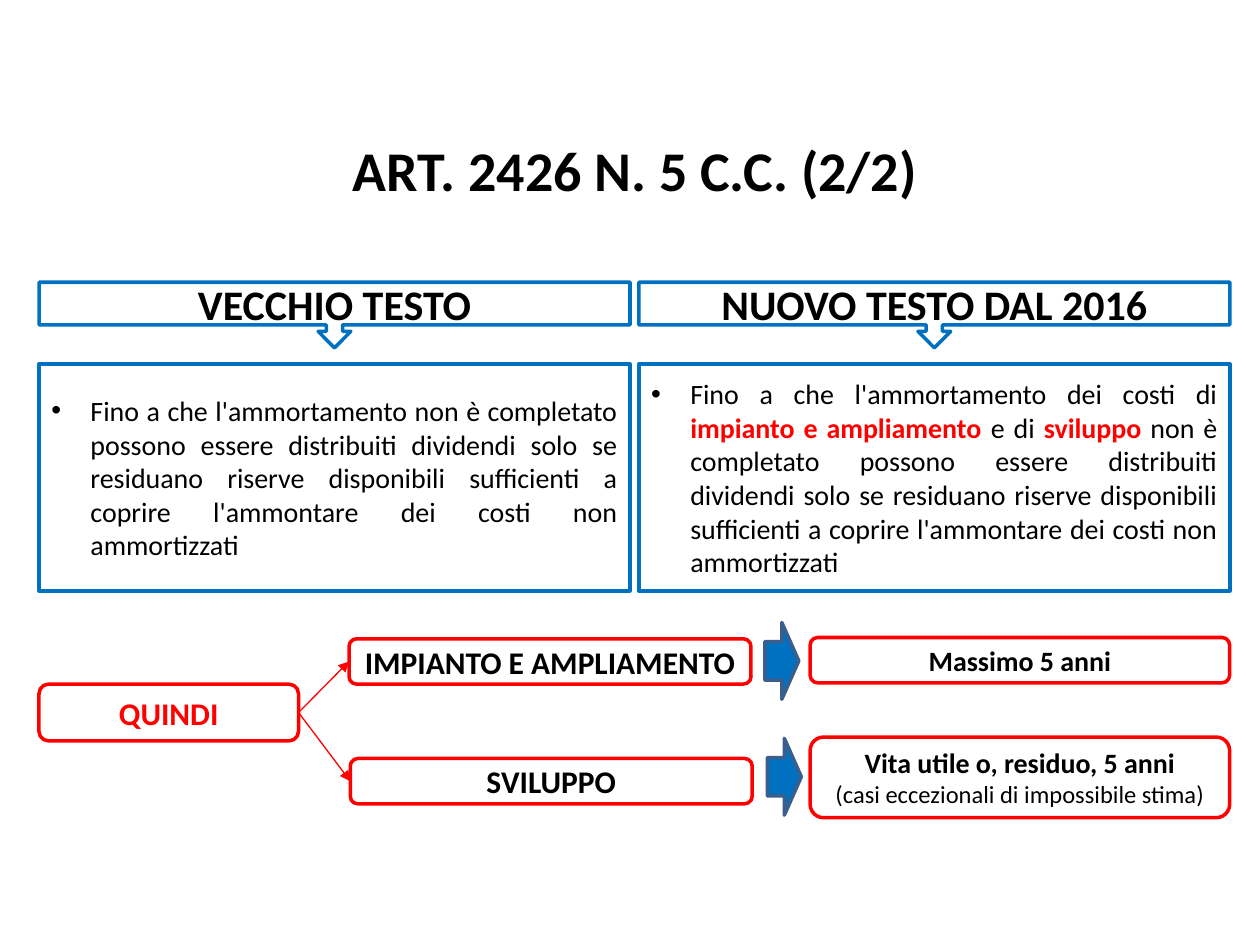
from lxml import etree
from pptx import Presentation
from pptx.dml.color import RGBColor
from pptx.enum.shapes import MSO_CONNECTOR, MSO_SHAPE
from pptx.enum.text import MSO_ANCHOR, PP_ALIGN
from pptx.oxml.ns import qn
from pptx.util import Inches, Pt

BLACK = RGBColor(0x00, 0x00, 0x00)
RED = RGBColor(0xFF, 0x00, 0x00)
BLUE = RGBColor(0x00, 0x70, 0xC0)
DARK_BLUE = RGBColor(0x3A, 0x5F, 0x8C)
FONT = "Calibri"

TITLE = "ART. 2426 N. 5 C.C. (2/2)"
VERSIONS = [
    (0.31, "VECCHIO TESTO", [
        ("Fino a che l'ammortamento non è completato possono essere distribuiti "
         "dividendi solo se residuano riserve disponibili sufficienti a coprire "
         "l'ammontare dei costi non ammortizzati", False),
    ]),
    (5.07, "NUOVO TESTO DAL 2016", [
        ("Fino a che l'ammortamento dei costi di ", False),
        ("impianto e ampliamento ", True),
        ("e di ", False),
        ("sviluppo", True),
        (" non è completato possono essere distribuiti dividendi solo se residuano "
         "riserve disponibili sufficienti a coprire l'ammontare dei costi non "
         "ammortizzati ", False),
    ]),
]
CONCLUSION = "QUINDI"
OUTCOMES = [
    {"cost": "IMPIANTO E AMPLIAMENTO", "cost_at": (2.77, 5.07),
     "arrow_at": (6.07, 4.94), "limit_at": (6.43, 5.06), "limit_height": 0.36,
     "limit": [("Massimo 5 anni", 16, True)]},
    {"cost": "SVILUPPO", "cost_at": (2.78, 6.02),
     "arrow_at": (6.09, 5.86), "limit_at": (6.43, 5.85), "limit_height": 0.64,
     "limit": [("Vita utile o, residuo, 5 anni", 16, True),
               ("(casi eccezionali di impossibile stima)", 14, False)]},
]


def add_box(slide, preset, left, top, width, height, line, fill=None):
    box = slide.shapes.add_shape(
        preset, Inches(left), Inches(top), Inches(width), Inches(height))
    box.shadow.inherit = False
    if fill is None:
        box.fill.background()
    else:
        box.fill.solid()
        box.fill.fore_color.rgb = fill
    box.line.color.rgb = line
    box.line.width = Pt(2)
    box.text_frame.word_wrap = True
    box.text_frame.vertical_anchor = MSO_ANCHOR.MIDDLE
    return box


def add_run(paragraph, text, size, bold=True, color=BLACK):
    run = paragraph.add_run()
    run.text = text
    run.font.name = FONT
    run.font.size = Pt(size)
    run.font.bold = bold
    run.font.color.rgb = color


def add_centred(frame, lines, color=BLACK):
    for index, (text, size, bold) in enumerate(lines):
        paragraph = frame.add_paragraph() if index else frame.paragraphs[0]
        paragraph.alignment = PP_ALIGN.CENTER
        add_run(paragraph, text, size, bold, color)


def add_bullet(paragraph):
    properties = paragraph._p.get_or_add_pPr()
    properties.set("marL", str(Inches(0.31)))
    properties.set("indent", str(Inches(-0.31)))
    etree.SubElement(properties, qn("a:buFont"), typeface="Arial")
    etree.SubElement(properties, qn("a:buChar"), char="•")


def add_branch(slide, source, target):
    branch = slide.shapes.add_connector(MSO_CONNECTOR.STRAIGHT, 0, 0, 0, 0)
    branch.begin_connect(source, 3)
    branch.end_connect(target, 1)
    branch.line.color.rgb = RED
    branch.line.width = Pt(0.75)
    etree.SubElement(branch.line._get_or_add_ln(), qn("a:tailEnd"), type="triangle")
    etree.SubElement(branch._element.spPr, qn("a:effectLst"))


def main():
    presentation = Presentation()
    presentation.slide_width = Inches(10)
    presentation.slide_height = Inches(7.5)
    slide = presentation.slides.add_slide(presentation.slide_layouts[6])

    title = slide.shapes.add_textbox(Inches(0.04), Inches(1.04), Inches(10), Inches(0.6))
    title.text_frame.word_wrap = True
    title.text_frame.vertical_anchor = MSO_ANCHOR.MIDDLE
    add_centred(title.text_frame, [(TITLE, 32, True)])

    for left, heading, passages in VERSIONS:
        header = add_box(slide, MSO_SHAPE.DOWN_ARROW_CALLOUT, left, 2.24, 4.69, 0.52, BLUE)
        add_centred(header.text_frame, [(heading, 24, True)])
        body = add_box(slide, MSO_SHAPE.RECTANGLE, left, 2.89, 4.69, 1.8, BLUE)
        paragraph = body.text_frame.paragraphs[0]
        paragraph.alignment = PP_ALIGN.JUSTIFY
        add_bullet(paragraph)
        for text, key in passages:
            add_run(paragraph, text, 16, key, RED if key else BLACK)

    conclusion = add_box(slide, MSO_SHAPE.ROUNDED_RECTANGLE, 0.31, 5.43, 2.06, 0.45, RED)
    add_centred(conclusion.text_frame, [(CONCLUSION, 18, True)], RED)

    for outcome in OUTCOMES:
        cost = add_box(slide, MSO_SHAPE.ROUNDED_RECTANGLE,
                       *outcome["cost_at"], 3.19, 0.36, RED)
        add_centred(cost.text_frame, [(outcome["cost"], 18, True)])
        add_branch(slide, conclusion, cost)
        add_box(slide, MSO_SHAPE.RIGHT_ARROW, *outcome["arrow_at"], 0.27, 0.61,
                DARK_BLUE, BLUE)
        limit = add_box(slide, MSO_SHAPE.ROUNDED_RECTANGLE,
                        *outcome["limit_at"], 3.33, outcome["limit_height"], RED)
        add_centred(limit.text_frame, outcome["limit"])

    presentation.save("out.pptx")


if __name__ == "__main__":
    main()
